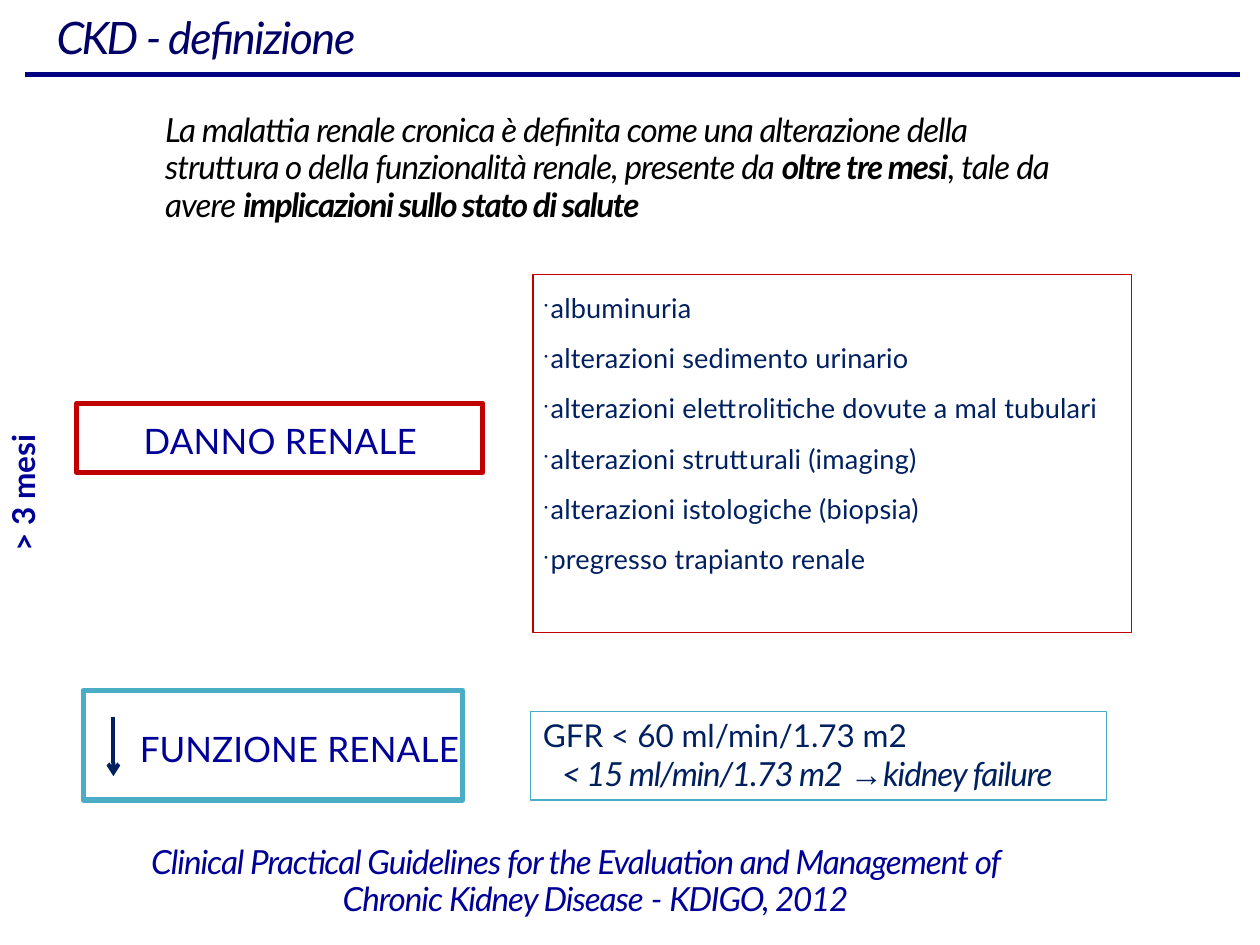
from lxml import etree
from pptx import Presentation
from pptx.dml.color import RGBColor
from pptx.enum.shapes import MSO_CONNECTOR, MSO_SHAPE
from pptx.enum.text import MSO_ANCHOR, PP_ALIGN
from pptx.oxml.ns import qn
from pptx.util import Inches, Pt

STRAIGHT, RECT = MSO_CONNECTOR.STRAIGHT, MSO_SHAPE.RECTANGLE
TOP, MIDDLE = MSO_ANCHOR.TOP, MSO_ANCHOR.MIDDLE
LEFT, CENTER = PP_ALIGN.LEFT, PP_ALIGN.CENTER

COLORS = {
    "paper": "FFFFFF", "black": "000000", "title": "000066", "rule": "000080",
    "blue": "000099", "navy": "002060", "red": "C00000", "teal": "4BACC6",
}

# A paragraph is a list of (text, letter spacing, font changes) runs.
TITLE = [[("CKD ", -1.6, {}), ("- ", -2.2, {}), ("definizione", -0.8, {})]]
DEFINITION = [[
    ("La malattia renale cronica è definita come una alterazione della "
     "struttura o della funzionalità renale, presente da ", -0.56, {}),
    ("oltre tre mesi", -0.75, {"bold": True}),
    (", tale da avere ", -0.5, {}),
    ("implicazioni sullo stato di salute", -0.8, {"bold": True}),
]]
DURATION = [[("> 3 mesi", 0, {})]]
DAMAGE = [[("DANNO RENALE", 0.1, {})]]
DAMAGE_SIGNS = [[(sign, 0.1, {})] for sign in (
    "albuminuria",
    "alterazioni sedimento urinario",
    "alterazioni elettrolitiche dovute a mal tubulari",
    "alterazioni strutturali (imaging)",
    "alterazioni istologiche (biopsia)",
    "pregresso trapianto renale",
)]
FUNCTION = [[("FUNZIONE ", 0, {}), ("RENALE", 0.1, {})]]
FAILURE_FONT = {"size": Pt(19), "italic": True}
GFR_LIMITS = [
    [("GFR < 60 ml/min/1.73 m2", -0.05, {})],
    [("< 15 ml/min/1.73 m2 ", -0.7, FAILURE_FONT),
     ("→", -0.6, {**FAILURE_FONT, "name": "Arial"}),
     ("kidney failure", -0.6, FAILURE_FONT)],
]
GUIDELINE = [[
    ("Clinical Practical Guidelines for the Evaluation and Management of "
     "Chronic Kidney Disease ", -0.56, {}),
    ("- ", -0.4, {}), ("KDIGO, 2012", -0.7, {}),
]]


def color(name):
    return RGBColor.from_string(COLORS[name])


def add_bullet(paragraph):
    props = paragraph._p.get_or_add_pPr()
    etree.SubElement(props, qn("a:buSzPct"), val="39000")
    etree.SubElement(props, qn("a:buChar"), char="•")


def write(shape, paragraphs, size, ink, indents=((0.01, 0),), inset=0.0,
          spacing=(None,), before=0, bullet=False, anchor=TOP, align=LEFT, **font):
    """Fill a shape; indents (left, first line) and spacing cycle by paragraph."""
    frame = shape.text_frame
    frame_format = {"word_wrap": True, "vertical_anchor": anchor, "margin_left": 0,
                    "margin_right": 0, "margin_bottom": 0, "margin_top": Inches(inset)}
    for key, value in frame_format.items():
        setattr(frame, key, value)
    for i, runs in enumerate(paragraphs):
        paragraph = frame.add_paragraph() if i else frame.paragraphs[0]
        paragraph.alignment = align
        paragraph.line_spacing = spacing[i % len(spacing)]
        if i and before:
            paragraph.space_before = Pt(before)
        left, first = indents[i % len(indents)]
        props = paragraph._p.get_or_add_pPr()
        props.set("marL", str(Inches(left)))
        props.set("indent", str(Inches(first)))
        if bullet:
            add_bullet(paragraph)
        for text, tracking, changes in runs:
            run = paragraph.add_run()
            run.text = text
            run_format = {"name": "Lato", "size": Pt(size), **font, **changes}
            for key, value in run_format.items():
                setattr(run.font, key, value)
            run.font.color.rgb = color(ink)
            run.font._element.set("spc", str(round(tracking * 100)))


def add_text(slide, box, *content, **text_format):
    label = slide.shapes.add_textbox(*map(Inches, box))
    write(label, *content, **text_format)
    return label


def add_frame(slide, box, border, width, *content, **text_format):
    """Add an unfilled, outlined rectangle with text."""
    frame = slide.shapes.add_shape(RECT, *map(Inches, box))
    frame.shadow.inherit = False
    frame.fill.background()
    frame.line.color.rgb = color(border)
    frame.line.width = Pt(width)
    write(frame, *content, **text_format)


def add_line(slide, ends, ink, width, arrow=False):
    line = slide.shapes.add_connector(STRAIGHT, *map(Inches, ends))
    line.line.color.rgb = color(ink)
    line.line.width = Pt(width)
    props = line._element.spPr
    if arrow:
        etree.SubElement(props.find(qn("a:ln")), qn("a:tailEnd"), type="arrow")
    etree.SubElement(props, qn("a:effectLst"))


def main():
    deck = Presentation()
    deck.slide_width, deck.slide_height = Inches(10), Inches(7.5)
    slide = deck.slides.add_slide(deck.slide_layouts[6])
    slide.background.fill.solid()
    slide.background.fill.fore_color.rgb = color("paper")

    add_text(slide, (0.18, 0.06, 2.9, 0.45), TITLE, 25.5, "title",
             inset=0.01, anchor=MIDDLE, align=CENTER, italic=True)
    add_line(slide, (0.2, 0.59, 9.84, 0.59), "rule", 2.83)
    add_text(slide, (1.3, 0.86, 7.19, 0.94), DEFINITION, 19, "black",
             inset=0.03, spacing=(0.94,), italic=True)
    duration = add_text(slide, (0.03, 3.26, 0.33, 1.13), DURATION, 18, "blue",
                        inset=0.01, bold=True)
    duration.text_frame._txBody.bodyPr.set("vert", "vert270")

    add_frame(slide, (0.61, 3.2, 3.22, 0.55), "red", 3, DAMAGE, 20, "blue",
              indents=((0.53, 0),), inset=0.13)
    add_frame(slide, (4.23, 2.18, 4.75, 2.84), "red", 0.75, DAMAGE_SIGNS, 15.5, "navy",
              indents=((0.14, -0.05),), inset=0.13, before=10.2, bullet=True)

    add_frame(slide, (0.66, 5.48, 3.01, 0.87), "teal", 3, FUNCTION, 20, "blue",
              indents=((0.45, 0),), inset=0.29)
    add_line(slide, (0.9, 5.69, 0.9, 6.16), "navy", 2.25, arrow=True)
    add_frame(slide, (4.21, 5.65, 4.57, 0.7), "teal", 0.75, GFR_LIMITS, 18, "navy",
              indents=((0.1, 0), (0.25, 0)), inset=0.04, spacing=(Pt(21.1), Pt(22.3)))

    add_text(slide, (1.19, 6.66, 7.31, 0.64), GUIDELINE, 19, "blue",
             indents=((1.53, -1.52),), inset=0.04, spacing=(Pt(21.2),), italic=True)
    deck.save("out.pptx")


if __name__ == "__main__":
    main()
